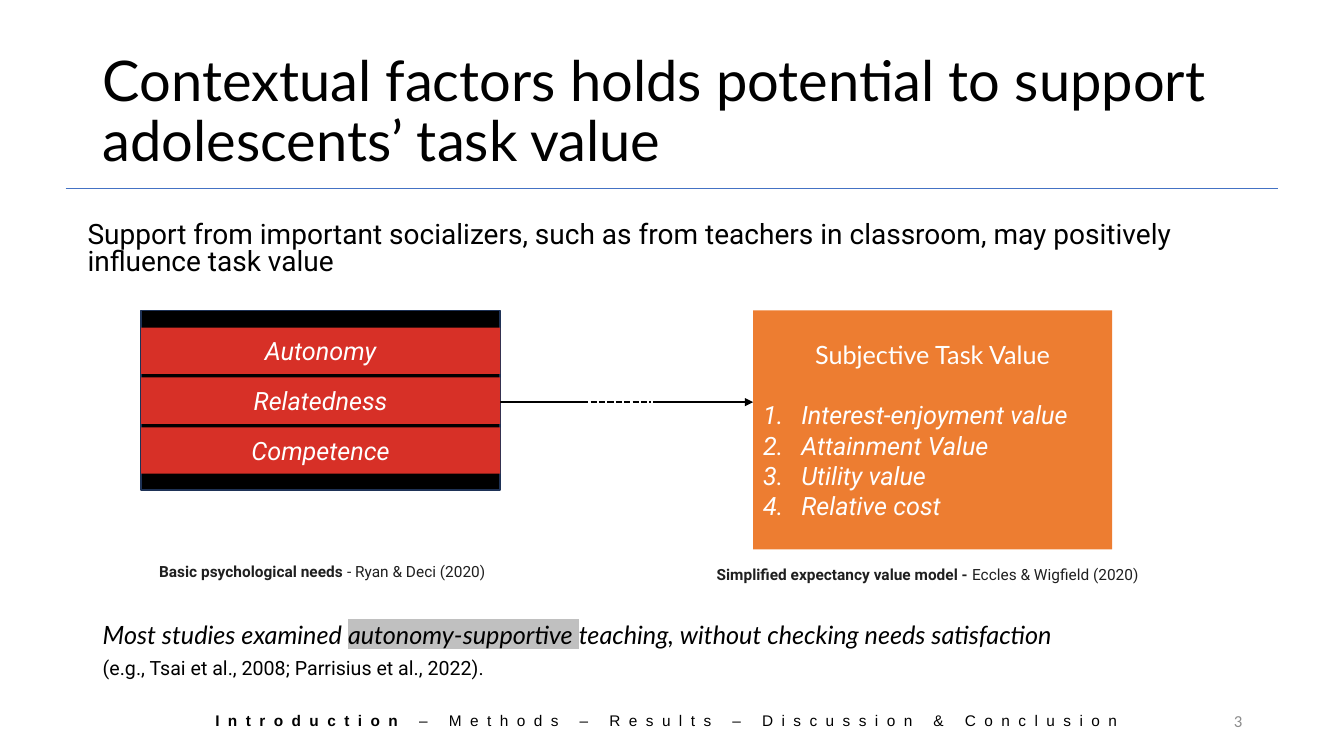
from lxml import etree
from pptx import Presentation
from pptx import util as u
from pptx.dml.color import RGBColor
from pptx.enum import dml, shapes, text
from pptx.oxml import ns

PX = 9144
LEFT, CENTER, RIGHT = text.PP_ALIGN.LEFT, text.PP_ALIGN.CENTER, text.PP_ALIGN.RIGHT
TOP, MIDDLE = text.MSO_ANCHOR.TOP, text.MSO_ANCHOR.MIDDLE

LATO = dict(name="Lato", size=18)
ROBOTO = dict(name="Roboto", size=18)
NEED = dict(ROBOTO, color="FFFFFF", italic=True)
CAPTION = dict(name="Roboto", size=11, color="1F1F1F")
FOOTER = dict(name="Arial", size=11, spacing=600)
QUOTE = dict(LATO, italic=True)

TITLE = "Contextual factors holds potential to support adolescents’ task value"
TITLE_BOX = (92, 40, 1150, 145)

TEXTS = [
    ((77, 216, 1153, 69), TOP, dict(line_spacing=0.8), [
        ("Support from important socializers, such as from teachers in classroom, "
         "may positively influence task value", dict(ROBOTO, size=20))]),
    ((701, 556, 553, 29), TOP, {}, [
        ("Simplified expectancy value model - ", dict(CAPTION, bold=True)),
        ("Eccles & Wigfield (2020)", CAPTION)]),
    ((148, 553, 553, 29), TOP, {}, [
        ("Basic psychological needs ", dict(CAPTION, bold=True)),
        ("- Ryan & Deci (2020)", CAPTION)]),
    ((92, 609, 1153, 40), TOP, {}, [
        ("Most studies examined ", QUOTE),
        ("autonomy-supportive ", dict(QUOTE, highlight="C0C0C0")),
        ("teaching, without checking needs satisfaction", QUOTE)]),
    ((92, 646, 435, 34), TOP, {}, [
        ("(e.g., Tsai et al., 2008; Parrisius et al., 2022).", dict(ROBOTO, size=14))]),
    ((70, 701, 1182, 29), TOP, dict(alignment=CENTER), [
        ("Introduction ", dict(FOOTER, bold=True)),
        ("– Methods – Results – Discussion & Conclusion", FOOTER)]),
    ((942, 695, 300, 40), MIDDLE, dict(alignment=RIGHT), [
        ("3", dict(name="Calibri", size=12, color="8C8C8C"))]),
]

NEEDS_BOX = (140, 308, 356, 178)
NEEDS = ["Autonomy", "Relatedness", "Competence"]
NEED_TOP, NEED_STEP, NEED_HEIGHT = 325, 49.5, 46

VALUE_BOX = (747, 308, 356, 237)
VALUE_TITLE = "Subjective Task Value"
VALUES = ["Interest-enjoyment value", "Attainment Value", "Utility value", "Relative cost"]
VALUE_INDENT, VALUE_GAP = 38, 21.6

RULE = (65, 187, 1268, 187)
ARROW_Y = 399
ARROW_PARTS = [(569, 646, True, False), (648, 747, False, True), (484, 583, False, False)]


def px(n):
    return u.Emu(round(n * PX))


def rgb(value):
    return RGBColor.from_string(value)


def add_run(p, words, fmt):
    r = p.add_run()
    r.text = words
    fmt = dict(fmt)
    highlight, spacing = fmt.pop("highlight", None), fmt.pop("spacing", None)
    r.font.color.rgb = rgb(fmt.pop("color", "000000"))
    fmt["size"] = u.Pt(fmt["size"])
    for key, value in fmt.items():
        setattr(r.font, key, value)
    rpr = r.font._element
    if spacing:
        rpr.set("spc", str(spacing))
    if highlight:
        mark = etree.Element(ns.qn("a:highlight"))
        etree.SubElement(mark, ns.qn("a:srgbClr"), val=highlight)
        rpr.find(ns.qn("a:latin")).addprevious(mark)


def fill_paragraph(p, runs, fmt):
    for key, value in fmt.items():
        setattr(p, key, value)
    for words, font in runs:
        add_run(p, words, font)


def frame(sp, anchor):
    tf = sp.text_frame
    tf.word_wrap = True
    tf.auto_size = text.MSO_AUTO_SIZE.NONE
    tf.vertical_anchor = anchor
    return tf


def add_box(s, box, fill, line=None):
    sp = s.shapes.add_shape(shapes.MSO_SHAPE.RECTANGLE, *map(px, box))
    sp.shadow.inherit = False
    sp.fill.solid()
    sp.fill.fore_color.rgb = rgb(fill)
    if line:
        sp.line.color.rgb = rgb(line)
        sp.line.width = u.Pt(1)
    else:
        sp.line.fill.background()
    return sp


def add_line(s, ends, color, width, dashed=False, arrow=False):
    c = s.shapes.add_connector(shapes.MSO_CONNECTOR.STRAIGHT, *map(px, ends))
    c.line.color.rgb = rgb(color)
    c.line.width = u.Pt(width)
    if dashed:
        c.line.dash_style = dml.MSO_LINE.SQUARE_DOT
    if arrow:
        etree.SubElement(c.line._get_or_add_ln(), ns.qn("a:tailEnd"), type="triangle")
    etree.SubElement(c._element.spPr, ns.qn("a:effectLst"))


def add_number(p):
    ppr = p._p.get_or_add_pPr()
    ppr.set("marL", str(px(VALUE_INDENT)))
    ppr.set("indent", str(-px(VALUE_INDENT)))
    etree.SubElement(ppr, ns.qn("a:buFont"), typeface="+mj-lt")
    etree.SubElement(ppr, ns.qn("a:buAutoNum"), type="arabicPeriod")


def main():
    prs = Presentation()
    prs.slide_width, prs.slide_height = px(1333), px(750)
    s = prs.slides.add_slide(prs.slide_layouts[5])

    title = s.shapes.title
    title.left, title.top, title.width, title.height = map(px, TITLE_BOX)
    fill_paragraph(frame(title, MIDDLE).paragraphs[0], [(TITLE, dict(LATO, size=40))],
                   dict(alignment=LEFT, line_spacing=0.9))
    add_line(s, RULE, "4472C4", 0.5)

    add_box(s, NEEDS_BOX, "000000", "1E3256")
    value_box = add_box(s, VALUE_BOX, "ED7D31")
    for start, end, dashed, arrow in ARROW_PARTS:
        add_line(s, (start, ARROW_Y, end, ARROW_Y), "000000", 1.5, dashed, arrow)

    left, _, width, _ = NEEDS_BOX
    for i, need in enumerate(NEEDS):
        sp = add_box(s, (left, NEED_TOP + i * NEED_STEP, width, NEED_HEIGHT), "D73027")
        fill_paragraph(frame(sp, MIDDLE).paragraphs[0], [(need, NEED)], dict(alignment=CENTER))

    tf = frame(value_box, MIDDLE)
    fill_paragraph(tf.paragraphs[0], [(VALUE_TITLE, dict(LATO, color="FFFFFF"))],
                   dict(alignment=CENTER))
    for i, value in enumerate(VALUES):
        p = tf.add_paragraph()
        p.alignment = LEFT
        if i == 0:
            p.space_before = u.Pt(VALUE_GAP)
        add_number(p)
        fill_paragraph(p, [(value, NEED)], {})

    for box, anchor, fmt, runs in TEXTS:
        sp = s.shapes.add_textbox(*map(px, box))
        fill_paragraph(frame(sp, anchor).paragraphs[0], runs, fmt)

    prs.save("out.pptx")


if __name__ == "__main__":
    main()
